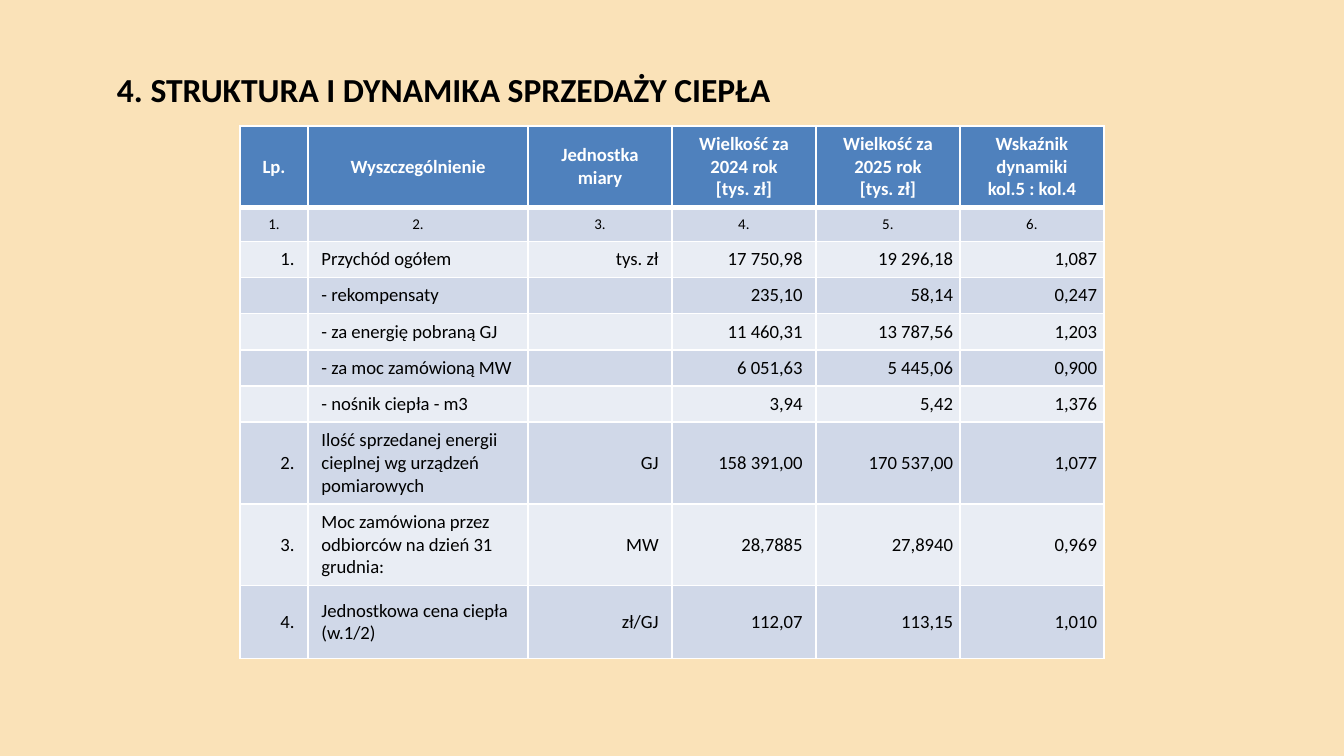
from lxml import etree
from pptx import Presentation
from pptx.dml.color import RGBColor
from pptx.enum.text import MSO_ANCHOR, MSO_AUTO_SIZE, PP_ALIGN
from pptx.oxml.ns import qn
from pptx.util import Emu, Pt

LEFT, CENTER, RIGHT = PP_ALIGN.LEFT, PP_ALIGN.CENTER, PP_ALIGN.RIGHT
TOP, MIDDLE = MSO_ANCHOR.TOP, MSO_ANCHOR.MIDDLE
NO_AUTOFIT = MSO_AUTO_SIZE.NONE

EMU_PER_PX = 914400 / 134.4
FONT = "Calibri"
COLORS = {
    "background": "FAE2B8",
    "text": "000000",
    "header": "4F81BD",
    "border": "FFFFFF",
    "dark_band": "D0D8E8",
    "light_band": "E9EDF4",
}

TITLE = "4. STRUKTURA I DYNAMIKA SPRZEDAŻY CIEPŁA"
COLUMN_WIDTHS = [68, 220] + [144] * 4
ROW_HEIGHTS = [81, 34] + [36] * 5 + [82, 81, 73]
COLUMN_ALIGNMENTS = [RIGHT, LEFT] + [RIGHT] * 4
ROWS = [
    ["Lp.", "Wyszczególnienie", "Jednostka miary", "Wielkość za 2024 rok\v[tys. zł]",
     "Wielkość za 2025 rok\v[tys. zł]", "Wskaźnik dynamiki\vkol.5 : kol.4"],
    ["1.", "2.", "3.", "4.", "5.", "6."],
    ["1.", "Przychód ogółem", "tys. zł", "17 750,98", "19 296,18", "1,087"],
    ["", "- rekompensaty", "", "235,10", "58,14", "0,247"],
    ["", "- za energię pobraną GJ", "", "11 460,31", "13 787,56", "1,203"],
    ["", "- za moc zamówioną MW", "", "6 051,63", "5 445,06", "0,900"],
    ["", "- nośnik ciepła - m3", "", "3,94", "5,42", "1,376"],
    ["2.", "Ilość sprzedanej energii cieplnej wg urządzeń pomiarowych", "GJ",
     "158 391,00", "170 537,00", "1,077"],
    ["3.", "Moc zamówiona przez odbiorców na dzień 31 grudnia:", "MW",
     "28,7885", "27,8940", "0,969"],
    ["4.", "Jednostkowa cena ciepła (w.1/2)", "zł/GJ", "112,07", "113,15", "1,010"],
]


def px(value):
    return Emu(round(value * EMU_PER_PX))


def rgb(name):
    return RGBColor.from_string(COLORS[name])


class SlideBuilder:
    def __init__(self, slide):
        self.slide = slide

    def background(self, color):
        fill = self.slide.background.fill
        fill.solid()
        fill.fore_color.rgb = rgb(color)

    def format_paragraph(self, paragraph, size, color, bold, alignment):
        paragraph.alignment = alignment
        for run in paragraph.runs:
            run.font.name = FONT
            run.font.size = Pt(size)
            run.font.bold = bold
            run.font.color.rgb = rgb(color)
        if not paragraph.runs:
            # An empty cell needs a small end mark to keep its row low
            paragraph._p.get_or_add_endParaRPr().set("sz", str(size * 100))

    def title(self, text, left, top, width, height):
        shape = self.slide.shapes.title
        shape.left, shape.top = px(left), px(top)
        shape.width, shape.height = px(width), px(height)
        frame = shape.text_frame
        frame.text = text
        frame.word_wrap = True
        frame.auto_size = NO_AUTOFIT
        frame.vertical_anchor = TOP
        frame.margin_left = frame.margin_right = px(12)
        frame.margin_top = frame.margin_bottom = px(6)
        self.format_paragraph(frame.paragraphs[0], 18, "text", True, LEFT)

    def border(self, cell, side, width):
        properties = cell._tc.get_or_add_tcPr()
        line = etree.SubElement(properties, qn(f"a:ln{side}"), w=str(Pt(width)))
        fill = etree.SubElement(line, qn("a:solidFill"))
        etree.SubElement(fill, qn("a:srgbClr"), val=COLORS["border"])

    def cell(self, cell, text, row, column):
        is_header = row == 0
        # Borders come before the fill in the cell properties
        for side in "LRTB" if is_header else "LRB":
            self.border(cell, side, 3 if is_header and side == "B" else 1)
        band = "dark_band" if row % 2 else "light_band"
        cell.fill.solid()
        cell.fill.fore_color.rgb = rgb("header" if is_header else band)
        cell.vertical_anchor = MIDDLE
        if row > 1 and column > 3:
            cell.margin_left = cell.margin_right = px(7)
            cell.margin_top = cell.margin_bottom = 0
        cell.text_frame.text = text
        self.format_paragraph(
            cell.text_frame.paragraphs[0],
            size=8 if row == 1 else 10,
            color="border" if is_header else "text",
            bold=is_header,
            alignment=CENTER if row < 2 else COLUMN_ALIGNMENTS[column],
        )

    def table(self, rows, left, top):
        frame = self.slide.shapes.add_table(
            len(rows), len(COLUMN_WIDTHS), px(left), px(top),
            px(sum(COLUMN_WIDTHS)), px(sum(ROW_HEIGHTS)))
        table = frame.table
        for column, width in zip(table.columns, COLUMN_WIDTHS):
            column.width = px(width)
        for row, height in zip(table.rows, ROW_HEIGHTS):
            row.height = px(height)
        for row, texts in enumerate(rows):
            for column, text in enumerate(texts):
                self.cell(table.cell(row, column), text, row, column)


def main():
    presentation = Presentation()
    presentation.slide_width, presentation.slide_height = px(1344), px(756)
    title_only = presentation.slide_layouts[5]
    builder = SlideBuilder(presentation.slides.add_slide(title_only))

    # Background and heading
    builder.background("background")
    builder.title(TITLE, 105, 63, 1142, 63)

    # Heat sales table
    builder.table(ROWS, 240, 126)

    presentation.save("out.pptx")


if __name__ == "__main__":
    main()
